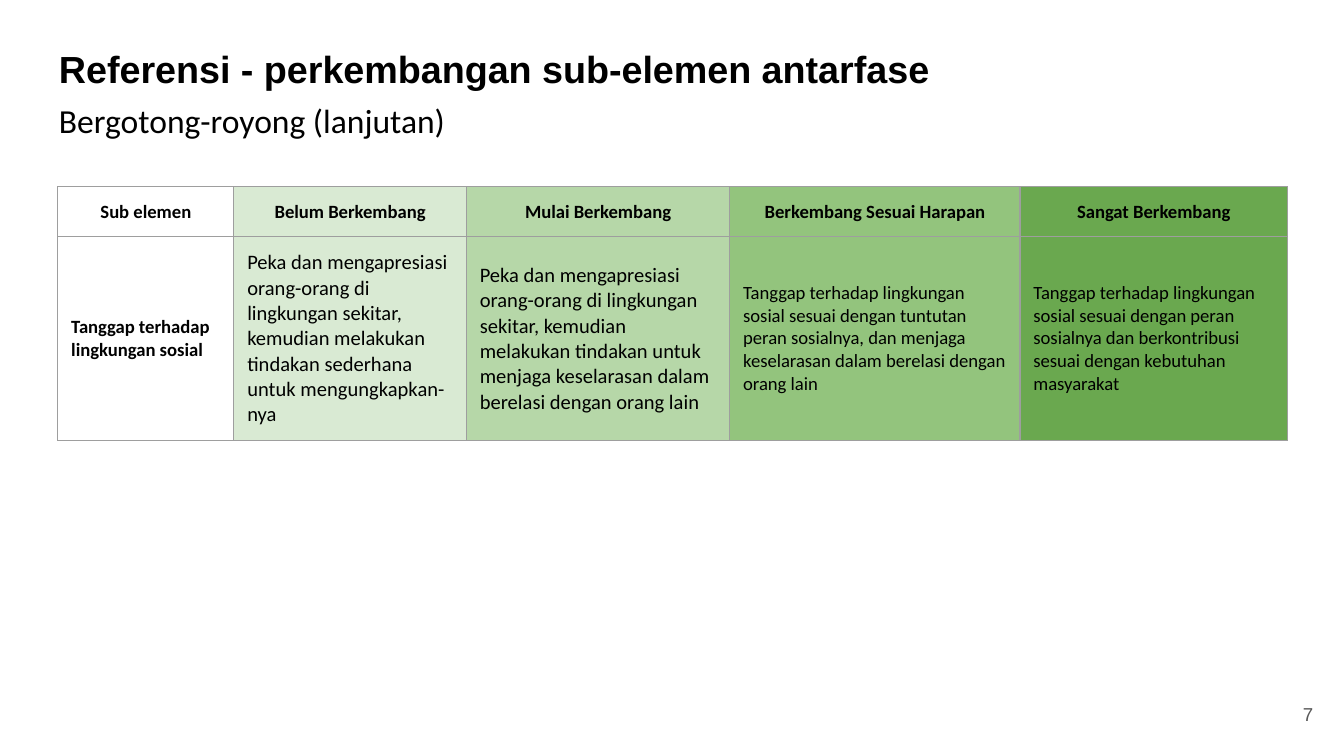
from lxml.etree import SubElement
from pptx import Presentation
from pptx.dml.color import RGBColor
from pptx.enum.text import MSO_ANCHOR, PP_ALIGN
from pptx.oxml.ns import qn
from pptx.util import Inches, Pt

COLORS = {
    "ink": "000000",
    "number": "595959",
    "border": "9E9E9E",
    "paper": "FFFFFF",
    "not_yet": "D9EAD3",
    "starting": "B6D7A8",
    "expected": "93C47D",
    "advanced": "6AA84F",
}
COLUMNS = [
    ("Sub elemen", 1.31, None, 10, ["Tanggap terhadap lingkungan sosial"]),
    ("Belum Berkembang", 1.73, "not_yet", 11, [
        "Peka dan mengapresiasi orang-orang di lingkungan sekitar, kemudian "
        "melakukan tindakan sederhana untuk mengungkapkan-",
        "nya",
    ]),
    ("Mulai Berkembang", 1.96, "starting", 11, [
        "Peka dan mengapresiasi orang-orang di lingkungan sekitar, kemudian "
        "melakukan tindakan untuk menjaga keselarasan dalam berelasi dengan orang lain",
    ]),
    ("Berkembang Sesuai Harapan", 2.16, "expected", 10, [
        "Tanggap terhadap lingkungan sosial sesuai dengan tuntutan peran sosialnya, "
        "dan menjaga keselarasan dalam berelasi dengan orang lain",
    ]),
    ("Sangat Berkembang", 1.99, "advanced", 10, [
        "Tanggap terhadap lingkungan sosial sesuai dengan peran sosialnya dan "
        "berkontribusi sesuai dengan kebutuhan masyarakat",
    ]),
]
ROW_HEIGHTS = [0.37, 1.52]


def write(para, text, font="Calibri", size=10, bold=False, color="ink",
          align=PP_ALIGN.LEFT, before=0):
    para.alignment = align
    para.space_before = Pt(before)
    span = para.add_run()
    span.text = text
    span.font.name = font
    span.font.size = Pt(size)
    span.font.bold = bold
    span.font.color.rgb = RGBColor.from_string(COLORS[color])


class SlideBuilder:
    """Holds the table style and the current slide."""

    def __init__(self, page, inset=0.1, border_width=0.75):
        self.page = page
        self.inset = Inches(inset)
        self.border_width = Pt(border_width)

    def background(self, color):
        fill = self.page.background.fill
        fill.solid()
        fill.fore_color.rgb = RGBColor.from_string(COLORS[color])

    def set_margins(self, holder):
        holder.margin_left = holder.margin_right = self.inset
        holder.margin_top = holder.margin_bottom = self.inset

    def text_box(self, left, top, width, height, anchor=MSO_ANCHOR.TOP):
        box = self.page.shapes.add_textbox(
            Inches(left), Inches(top), Inches(width), Inches(height))
        frame = box.text_frame
        frame.word_wrap = True
        frame.vertical_anchor = anchor
        self.set_margins(frame)
        return frame

    def cell(self, cell, lines, fill, **text_format):
        self.set_margins(cell)
        cell.vertical_anchor = MSO_ANCHOR.MIDDLE
        frame = cell.text_frame
        for index, line in enumerate(lines):
            para = frame.add_paragraph() if index else frame.paragraphs[0]
            write(para, line, **text_format)
        properties = cell._tc.get_or_add_tcPr()
        for side in ("a:lnL", "a:lnR", "a:lnT", "a:lnB"):
            border = SubElement(properties, qn(side), w=str(self.border_width))
            solid = SubElement(border, qn("a:solidFill"))
            SubElement(solid, qn("a:srgbClr"), val=COLORS["border"])
        if fill:
            cell.fill.solid()
            cell.fill.fore_color.rgb = RGBColor.from_string(COLORS[fill])
        else:
            cell.fill.background()

    def table(self, left, top, columns, heights):
        width = sum(column[1] for column in columns)
        table = self.page.shapes.add_table(
            len(heights), len(columns), Inches(left), Inches(top),
            Inches(width), Inches(sum(heights))).table
        for row, height in zip(table.rows, heights):
            row.height = Inches(height)
        for index, (heading, width, fill, size, lines) in enumerate(columns):
            table.columns[index].width = Inches(width)
            self.cell(table.cell(0, index), [heading], fill,
                      bold=True, align=PP_ALIGN.CENTER)
            self.cell(table.cell(1, index), lines, fill,
                      size=size, bold=index == 0)


def main():
    deck = Presentation()
    deck.slide_width = Inches(10)
    deck.slide_height = Inches(10 * 9 / 16)
    builder = SlideBuilder(deck.slides.add_slide(deck.slide_layouts[6]))
    builder.background("paper")

    title = builder.text_box(0.34, 0.24, 9.32, 0.85)
    write(title.paragraphs[0], "Referensi - perkembangan sub-elemen antarfase",
          font="Arial", size=20.2, bold=True)
    write(title.add_paragraph(), "Bergotong-royong (lanjutan)", size=18, before=5)

    builder.table(0.43, 1.39, COLUMNS, ROW_HEIGHTS)

    number = builder.text_box(9.27, 5.1, 0.6, 0.43, anchor=MSO_ANCHOR.MIDDLE)
    write(number.paragraphs[0], "7", font="Arial", color="number",
          align=PP_ALIGN.RIGHT)

    deck.save("out.pptx")


if __name__ == "__main__":
    main()
